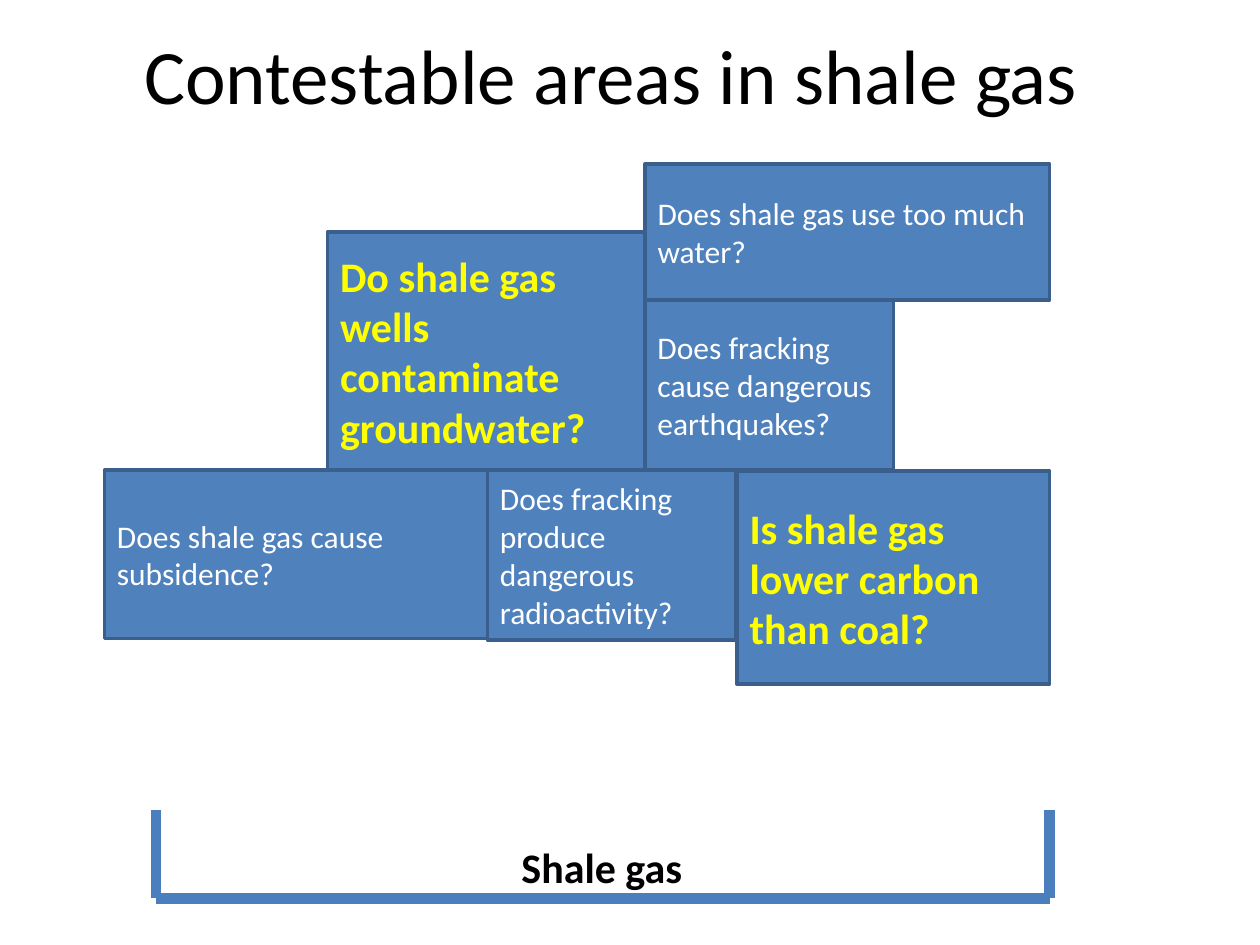
from pptx import Presentation
from pptx.dml.color import RGBColor
from pptx.enum.shapes import MSO_CONNECTOR as Connector, MSO_SHAPE as Shape
from pptx.enum.text import MSO_ANCHOR as Anchor, MSO_AUTO_SIZE as AutoSize, PP_ALIGN as Align
from pptx.oxml.ns import qn
from pptx.util import Inches, Pt
from lxml import etree

COLORS = {
    "text": "000000",
    "brick": "4F81BD",
    "edge": "3A5F8C",
    "bracket": "4B7EBC",
    "plain": "FFFFFF",
    "key": "FFFF00",
}


def color(name):
    return RGBColor.from_string(COLORS[name])


def write_text(frame, text, size=18, fill="text", bold=False,
               align=Align.LEFT, anchor=Anchor.MIDDLE, wrap=True):
    frame.word_wrap = wrap
    frame.vertical_anchor = anchor
    para = frame.paragraphs[0]
    para.alignment = align
    span = para.add_run()
    span.text = text
    span.font.name = "Calibri"
    span.font.size = Pt(size)
    span.font.bold = bold
    span.font.color.rgb = color(fill)


class SlideBuilder:
    def __init__(self, page):
        self.page = page

    def text(self, area, text, grow=False, **style):
        box = self.page.shapes.add_textbox(*map(Inches, area))
        write_text(box.text_frame, text, **style)
        box.text_frame.auto_size = AutoSize.SHAPE_TO_FIT_TEXT if grow else AutoSize.NONE

    def brick(self, area, text, key=False):
        box = self.page.shapes.add_shape(Shape.RECTANGLE, *map(Inches, area))
        box.shadow.inherit = False
        box.fill.solid()
        box.fill.fore_color.rgb = color("brick")
        box.line.color.rgb = color("edge")
        box.line.width = Pt(2)
        write_text(box.text_frame, text, size=24 if key else 18,
                   fill="key" if key else "plain", bold=key)

    def line(self, start, end):
        line = self.page.shapes.add_connector(
            Connector.STRAIGHT, *map(Inches, (*start, *end)))
        line.line.color.rgb = color("bracket")
        line.line.width = Pt(6)
        etree.SubElement(line._element.spPr, qn("a:effectLst"))


def main():
    deck = Presentation()
    deck.slide_width, deck.slide_height = Inches(10), Inches(7.5)
    builder = SlideBuilder(deck.slides.add_slide(deck.slide_layouts[6]))

    builder.text((0.35, -0.04, 9, 1.25), "Contestable areas in shale gas",
                 size=44, align=Align.CENTER)

    bricks = [
        ((2.6, 1.84, 2.52, 1.89), "Do shale gas wells contaminate groundwater?", True),
        ((5.12, 2.38, 1.97, 1.35), "Does fracking cause dangerous earthquakes?", False),
        ((5.85, 3.74, 2.48, 1.69), "Is shale gas lower carbon than coal?", True),
        ((3.87, 3.73, 1.97, 1.35), "Does fracking produce dangerous radioactivity?", False),
        ((5.12, 1.3, 3.21, 1.08), "Does shale gas use too much water?", False),
        ((0.83, 3.73, 3.04, 1.34), "Does shale gas cause subsidence?", False),
    ]
    for area, question, key in bricks:
        builder.brick(area, question, key)

    left, right, top, bottom = 1.24, 8.33, 6.43, 7.13
    builder.line((left, bottom), (right, bottom))
    for side in (left, right):
        builder.line((side, bottom), (side, top))

    builder.text((4.04, 6.63, 1.49, 0.5), "Shale gas", grow=True, size=24,
                 bold=True, anchor=Anchor.TOP, wrap=False)

    deck.save("out.pptx")


if __name__ == "__main__":
    main()
